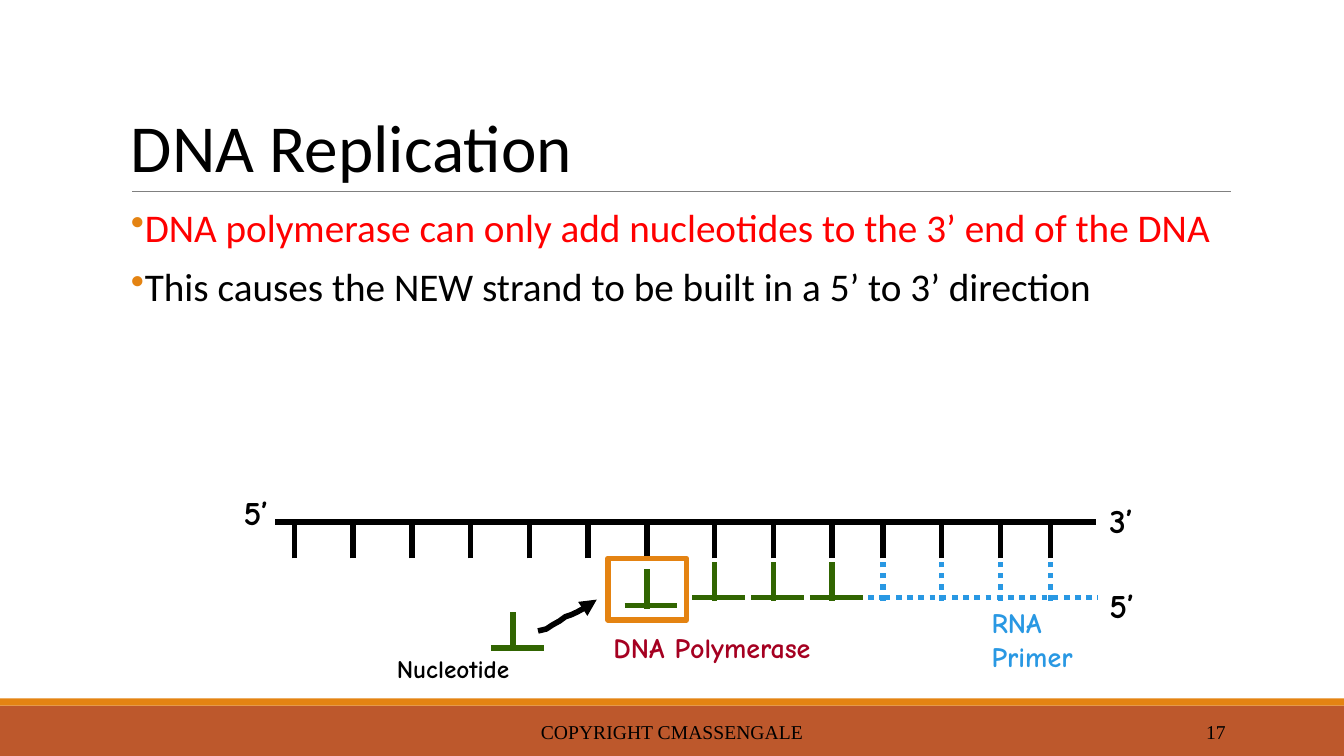
from dataclasses import dataclass

from lxml import etree
from pptx import Presentation
from pptx.dml.color import RGBColor
from pptx.enum import dml, shapes, text
from pptx.oxml.ns import qn
from pptx.util import Cm, Pt


@dataclass(frozen=True)
class Theme:
    black: str = "000000"
    white: str = "FFFFFF"
    red: str = "FF0000"
    grey: str = "808080"
    orange: str = "E48312"
    rust: str = "BD582C"
    blue: str = "2998E3"
    green: str = "316501"
    crimson: str = "A50021"
    main_font: str = "Calibri"
    label_font: str = "Comic Neue"
    footer_font: str = "Times New Roman"
    title_size: int = 48
    body_size: int = 28
    end_size: int = 24
    label_size: int = 20
    small_size: int = 18
    footer_size: int = 14
    strand_width: int = 4


THEME = Theme()

# Content: boxes are left, top, width, height in cm
TITLE = "DNA Replication"
BULLETS = [
    ("DNA polymerase can only add nucleotides to the 3’ end of the DNA", THEME.red),
    ("This causes the NEW strand to be built in a 5’ to 3’ direction", THEME.black),
]
FOOTERS = [
    ("COPYRIGHT CMASSENGALE", (10.24, 17.93, 13.39, 1.02), text.PP_ALIGN.CENTER),
    ("17", (27.51, 17.93, 3.63, 1.02), text.PP_ALIGN.RIGHT),
]
LABELS = [
    (["RNA", "Primer"], (24.74, 15.14, 2.72, 1.96), THEME.label_size, THEME.blue),
    (["DNA Polymerase"], (15.21, 15.77, 6.2, 1.09), THEME.label_size, THEME.crimson),
    (["Nucleotide"], (9.75, 16.33, 3.78, 1.02), THEME.small_size, THEME.black),
    (["5’"], (27.71, 14.61, 1.22, 1.27), THEME.end_size, THEME.black),
    (["5’"], (5.89, 12.27, 1.22, 1.27), THEME.end_size, THEME.black),
    (["3’"], (27.71, 12.47, 1.22, 1.27), THEME.end_size, THEME.black),
]
ARROW = [(13.56, 15.9), (13.77, 15.85), (13.92, 15.75), (14.1, 15.65), (14.25, 15.54),
         (14.4, 15.49), (14.55, 15.42), (14.73, 15.32), (14.88, 15.21), (15.04, 15.11)]

# Strand geometry
RUNG_GAP = 1.48
RUNG_HEIGHT = 0.99
RUNG_TOP = 13.08
STRAND_Y = 13.16
NEW_TOP = 14.15
BASE_DROP = 0.91
open_rungs = [7.42 + RUNG_GAP * i for i in range(7)]
paired_rungs = [18.01 + RUNG_GAP * i for i in range(3)]
primer_rungs = [22.25 + RUNG_GAP * i for i in range(3)] + [26.47]
nucleotides = [(x, NEW_TOP) for x in paired_rungs] + [(12.93, 15.42)]
docked_nucleotide = (open_rungs[-1], 14.35)

presentation = Presentation()
presentation.slide_width, presentation.slide_height = Cm(33.87), Cm(19.05)
slide = presentation.slides.add_slide(presentation.slide_layouts[6])


def rgb(color):
    return RGBColor.from_string(color)


def add_text(paragraphs, box, *, size, font, color=THEME.black, bold=False, wrap=True,
             align=text.PP_ALIGN.LEFT, anchor=text.MSO_ANCHOR.TOP,
             line_spacing=None, space_before=0, bullet=None):
    """Each paragraph is a string, or a (string, color) pair."""
    shape = slide.shapes.add_textbox(*map(Cm, box))
    frame = shape.text_frame
    frame.word_wrap = wrap
    frame.vertical_anchor = anchor
    frame.auto_size = text.MSO_AUTO_SIZE.NONE if wrap else text.MSO_AUTO_SIZE.SHAPE_TO_FIT_TEXT
    for index, item in enumerate(paragraphs):
        words, tint = (item, color) if isinstance(item, str) else item
        paragraph = frame.paragraphs[0] if index == 0 else frame.add_paragraph()
        paragraph.alignment = align
        paragraph.line_spacing = line_spacing
        paragraph.space_before = Pt(space_before)
        run = paragraph.add_run()
        run.text = words
        run.font.name, run.font.size, run.font.bold = font, Pt(size), bold
        run.font.color.rgb = rgb(tint)
        if bullet:
            properties = paragraph._p.get_or_add_pPr()
            properties.set("marL", str(Cm(0.25)))
            properties.set("indent", str(-Cm(0.25)))
            bullet_color = etree.SubElement(properties, qn("a:buClr"))
            etree.SubElement(bullet_color, qn("a:srgbClr"), val=bullet)
            etree.SubElement(properties, qn("a:buChar"), char="•")


def add_line(start, end, color, width=THEME.strand_width, dotted=False):
    line = slide.shapes.add_connector(shapes.MSO_CONNECTOR.STRAIGHT,
                                      *map(Cm, (*start, *end)))
    line.line.color.rgb = rgb(color)
    line.line.width = Pt(width)
    if dotted:
        line.line.dash_style = dml.MSO_LINE.ROUND_DOT
    etree.SubElement(line._element.spPr, qn("a:effectLst"))


def add_rung(x, top, color, dotted=False):
    add_line((x, top + RUNG_HEIGHT), (x, top), color, dotted=dotted)


def add_nucleotide(x, top):
    add_rung(x, top, THEME.green)
    add_line((x - 0.56, top + BASE_DROP), (x + 0.77, top + BASE_DROP), THEME.green)


def add_box(box, fill, outline=None):
    shape = slide.shapes.add_shape(shapes.MSO_SHAPE.RECTANGLE, *map(Cm, box))
    shape.shadow.inherit = False
    shape.fill.solid()
    shape.fill.fore_color.rgb = rgb(fill)
    if outline:
        shape.line.color.rgb = rgb(outline)
        shape.line.width = Pt(THEME.strand_width)
    else:
        shape.line.fill.background()


def add_arrow(points):
    first, *rest = [(Cm(x), Cm(y)) for x, y in points]
    builder = slide.shapes.build_freeform(*first)
    builder.add_line_segments(rest, close=False)
    arrow = builder.convert_to_shape()
    arrow.shadow.inherit = False
    arrow.fill.background()
    arrow.line.color.rgb = rgb(THEME.black)
    arrow.line.width = Pt(THEME.strand_width)
    etree.SubElement(arrow.line._get_or_add_ln(), qn("a:tailEnd"), type="triangle")


# Footer bands and title rule
add_box((0, 17.78, 33.87, 1.27), THEME.rust)
add_box((0, 17.6, 33.87, 0.18), THEME.orange)
add_line((3.33, 4.83), (31.01, 4.83), THEME.grey, width=0.5)

# Title, bullets and footers
add_text([TITLE], (3.05, 0.79, 27.94, 4.04), size=THEME.title_size, font=THEME.main_font,
         anchor=text.MSO_ANCHOR.BOTTOM, line_spacing=0.85)
add_text(BULLETS, (3.05, 5.13, 27.94, 11.18), size=THEME.body_size, font=THEME.main_font,
         line_spacing=0.9, space_before=12, bullet=THEME.orange)
for words, box, align in FOOTERS:
    add_text([words], box, size=THEME.footer_size, font=THEME.footer_font,
             align=align, anchor=text.MSO_ANCHOR.MIDDLE)

# Template strand
add_line((27.61, STRAND_Y), (6.93, STRAND_Y), THEME.black)
for x in open_rungs + paired_rungs + primer_rungs:
    add_rung(x, RUNG_TOP, THEME.black)

# Primer and new strand
for end_x in (27.66, 21.74):
    add_line((22.3, NEW_TOP + BASE_DROP), (end_x, NEW_TOP + BASE_DROP),
             THEME.blue, dotted=True)
for x in primer_rungs:
    add_rung(x, NEW_TOP, THEME.blue, dotted=True)
for x, top in nucleotides:
    add_nucleotide(x, top)

# Polymerase with the nucleotide being added
add_box((15.32, 14.07, 1.98, 1.55), THEME.white, THEME.orange)
add_nucleotide(*docked_nucleotide)
add_arrow(ARROW)

# Labels
for lines, box, size, color in LABELS:
    add_text(lines, box, size=size, font=THEME.label_font, color=color, bold=True, wrap=False)

presentation.save("out.pptx")
